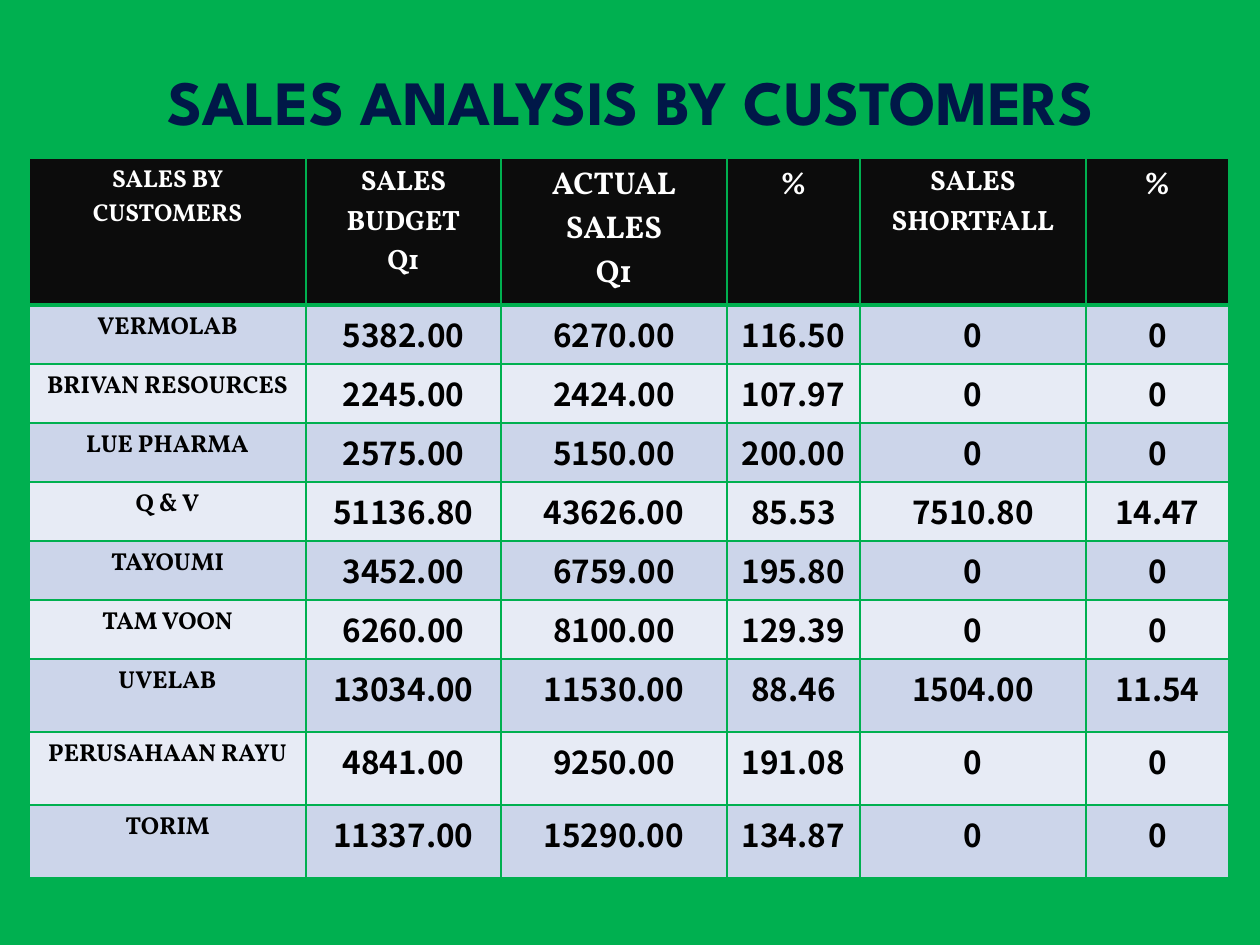
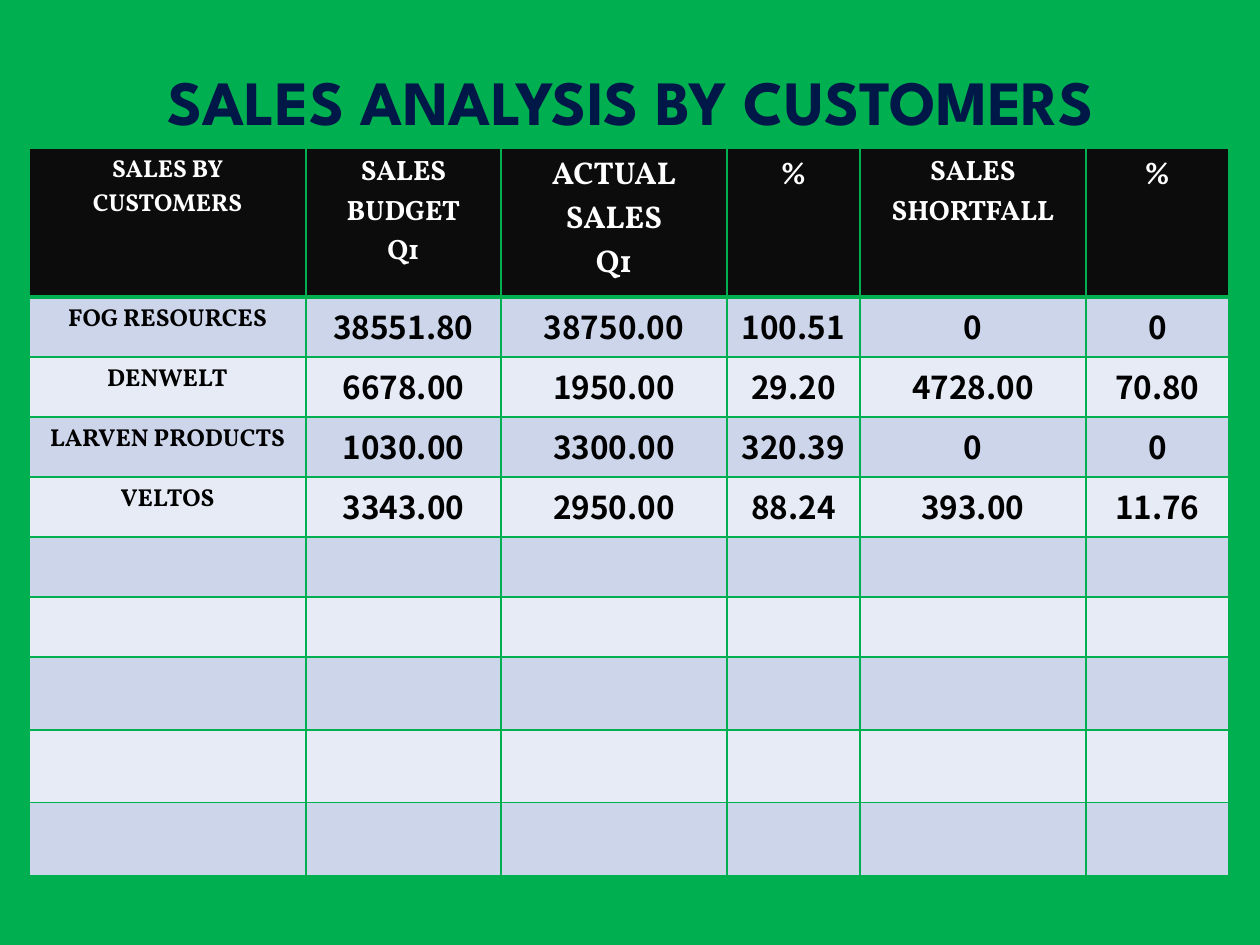
from dataclasses import dataclass

from lxml.etree import SubElement
from pptx import Presentation
from pptx.dml.color import RGBColor as Color
from pptx.enum.text import MSO_VERTICAL_ANCHOR as Anchor, PP_PARAGRAPH_ALIGNMENT as Align
from pptx.oxml.ns import qn
from pptx.util import Emu, Pt

EMU_PER_PX = 914400 // 126


@dataclass(frozen=True)
class Theme:
    green: str = "00B050"
    navy: str = "001848"
    header_fill: str = "0C0C0C"
    bands: tuple = ("CCD5EA", "E7EBF5")
    white: str = "FFFFFF"
    black: str = "000000"
    title_font: str = "League Spartan"
    label_font: str = "Vollkorn"
    number_font: str = "Noto Sans CJK KR"
    title_size: int = 36
    label_size: int = 14
    number_size: int = 18
    grid_width: int = 1
    header_rule: int = 3


THEME = Theme()
TITLE = "SALES ANALYSIS BY CUSTOMERS"
TABLE_LEFT = 29
COLUMN_WIDTHS = (277, 195, 226, 133, 226, 143)
HEADINGS = (
    (("SALES BY CUSTOMERS",), 14),
    (("SALES BUDGET", "Q1"), 16),
    (("ACTUAL SALES", "Q1"), 18),
    (("%",), 18),
    (("SALES SHORTFALL",), 16),
    (("%",), 18),
)
FIRST_CUSTOMERS = (
    ("VERMOLAB", "5382.00", "6270.00", "116.50", "0", "0"),
    ("BRIVAN RESOURCES", "2245.00", "2424.00", "107.97", "0", "0"),
    ("LUE PHARMA", "2575.00", "5150.00", "200.00", "0", "0"),
    ("Q & V", "51136.80", "43626.00", "85.53", "7510.80", "14.47"),
    ("TAYOUMI", "3452.00", "6759.00", "195.80", "0", "0"),
    ("TAM VOON", "6260.00", "8100.00", "129.39", "0", "0"),
    ("UVELAB", "13034.00", "11530.00", "88.46", "1504.00", "11.54"),
    ("PERUSAHAAN RAYU", "4841.00", "9250.00", "191.08", "0", "0"),
    ("TORIM", "11337.00", "15290.00", "134.87", "0", "0"),
)
OTHER_CUSTOMERS = (
    ("FOG RESOURCES", "38551.80", "38750.00", "100.51", "0", "0"),
    ("DENWELT", "6678.00", "1950.00", "29.20", "4728.00", "70.80"),
    ("LARVEN PRODUCTS", "1030.00", "3300.00", "320.39", "0", "0"),
    ("VELTOS", "3343.00", "2950.00", "88.24", "393.00", "11.76"),
)


def px(length):
    return Emu(length * EMU_PER_PX)


def add_run(paragraph, text, font_name, size, color):
    paragraph.alignment = Align.CENTER
    run = paragraph.add_run()
    run.text = text
    run.font.name = font_name
    run.font.size = Pt(size)
    run.font.bold = True
    run.font.color.rgb = Color.from_string(color)


def write_lines(text_frame, lines, font_name, size, color):
    for index, line in enumerate(lines):
        paragraph = text_frame.add_paragraph() if index else text_frame.paragraphs[0]
        add_run(paragraph, line, font_name, size, color)


def set_borders(cell, top, bottom):
    properties = cell._tc.get_or_add_tcPr()
    widths = {"lnL": THEME.grid_width, "lnR": THEME.grid_width, "lnT": top, "lnB": bottom}
    for tag, width in widths.items():
        line = SubElement(properties, qn(f"a:{tag}"), w=str(Pt(width)))
        fill = SubElement(line, qn("a:solidFill"))
        SubElement(fill, qn("a:srgbClr"), val=THEME.green)


def style_cell(cell, row_index):
    rule, grid = THEME.header_rule, THEME.grid_width
    set_borders(cell, rule if row_index == 1 else grid, rule if row_index == 0 else grid)
    color = THEME.bands[(row_index - 1) % 2] if row_index else THEME.header_fill
    cell.fill.solid()
    cell.fill.fore_color.rgb = Color.from_string(color)


def add_title(slide):
    shape = slide.shapes.add_textbox(px(64), px(56), px(1134), px(88))
    text_frame = shape.text_frame
    text_frame.word_wrap = True
    text_frame.vertical_anchor = Anchor.MIDDLE
    write_lines(text_frame, (TITLE,), THEME.title_font, THEME.title_size, THEME.navy)


def add_sales_table(slide, customers, top, row_heights):
    shape = slide.shapes.add_table(
        len(row_heights), len(COLUMN_WIDTHS),
        px(TABLE_LEFT), px(top), px(sum(COLUMN_WIDTHS)), px(sum(row_heights)),
    )
    table = shape.table
    for column, width in zip(table.columns, COLUMN_WIDTHS):
        column.width = px(width)
    for row_index, (row, height) in enumerate(zip(table.rows, row_heights)):
        row.height = px(height)
        for cell in row.cells:
            style_cell(cell, row_index)
    for cell, (lines, size) in zip(table.rows[0].cells, HEADINGS):
        write_lines(cell.text_frame, lines, THEME.label_font, size, THEME.white)
    for row_index, (name, *figures) in enumerate(customers, start=1):
        write_lines(table.cell(row_index, 0).text_frame, (name,),
                    THEME.label_font, THEME.label_size, THEME.black)
        for column_index, figure in enumerate(figures, start=1):
            write_lines(table.cell(row_index, column_index).text_frame, (figure,),
                        THEME.number_font, THEME.number_size, THEME.black)


def add_sales_slide(presentation, customers, top, header_height, row_height):
    slide = presentation.slides.add_slide(presentation.slide_layouts[6])
    background = slide.background.fill
    background.solid()
    background.fore_color.rgb = Color.from_string(THEME.green)
    add_title(slide)
    row_heights = [header_height] + [row_height] * 6 + [73] * 3
    add_sales_table(slide, customers, top, row_heights)


def main():
    presentation = Presentation()
    presentation.slide_width = px(1260)
    presentation.slide_height = px(945)
    add_sales_slide(presentation, FIRST_CUSTOMERS, 158, 147, 59)
    add_sales_slide(presentation, OTHER_CUSTOMERS, 148, 149, 60)
    presentation.save("out.pptx")


if __name__ == "__main__":
    main()
